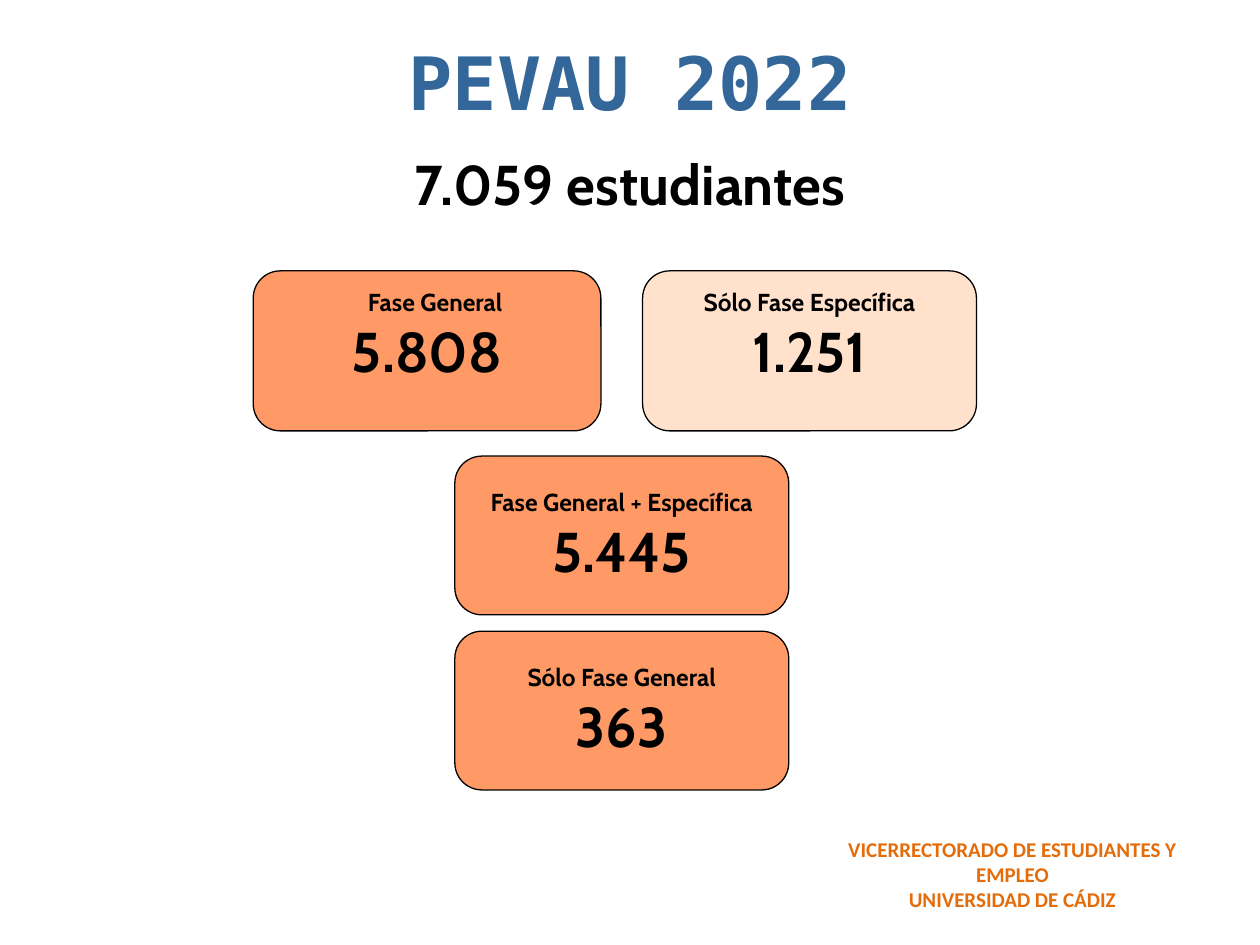
"""Build the PEVAU 2022 student count slide."""
from pptx import Presentation
from pptx.dml.color import RGBColor
from pptx.enum.shapes import MSO_SHAPE
from pptx.enum.text import MSO_ANCHOR, PP_ALIGN
from pptx.util import Inches, Pt

ROUND = MSO_SHAPE.ROUNDED_RECTANGLE
TOP, MIDDLE = MSO_ANCHOR.TOP, MSO_ANCHOR.MIDDLE
CENTER = PP_ALIGN.CENTER

LABEL = {"name": "Cabin", "size": 14, "color": "000000"}
COUNT = {**LABEL, "size": 32}
TITLE = {"name": "DejaVu Sans Mono", "size": 42, "color": "336699"}
FOOTER = {"name": "Calibri", "size": 12, "color": "E46C0A"}

ORANGE, PEACH = "FF9966", "FFE1CC"
LIFT = 0.24
CARDS = [
    ("Fase General + Específica", "5.445", (3.61, 3.62, 2.65, 1.26), ORANGE, 0, 0),
    ("Sólo Fase General", "363", (3.61, 5.01, 2.65, 1.26), ORANGE, 0, 0),
    ("Fase General", "5.808", (2.01, 2.15, 2.76, 1.27), ORANGE, LIFT, 0.13),
    ("Sólo Fase Específica", "1.251", (5.1, 2.15, 2.65, 1.27), PEACH, LIFT, 0),
]
TEXTS = [
    (["PEVAU 2022"], (0, 0.34, 10, 0.65), TITLE, (0.07, 0.03), 0.9),
    (["7.059 estudiantes"], (0, 1.15, 10, 0.61), COUNT, (0.07, 0.04), 1),
    (["VICERRECTORADO DE ESTUDIANTES Y EMPLEO", "UNIVERSIDAD DE CÁDIZ"],
     (6.34, 6.58, 3.39, 0.53), FOOTER, (0.12, 0.06), 1),
]


def paint(target, color):
    target.solid()
    target.fore_color.rgb = RGBColor.from_string(color)


def write(shape, lines, margins, anchor, spacing=1):
    frame = shape.text_frame
    frame.word_wrap = True
    frame.vertical_anchor = anchor
    for side, gap in zip(("left", "top", "right", "bottom"), margins):
        setattr(frame, f"margin_{side}", Inches(gap))
    for i, (text, style) in enumerate(lines):
        para = frame.add_paragraph() if i else frame.paragraphs[0]
        para.alignment = CENTER
        para.line_spacing = spacing
        run = para.add_run()
        run.text = text
        looks = {"name": style["name"], "size": Pt(style["size"]), "bold": True}
        for key, value in looks.items():
            setattr(run.font, key, value)
        paint(run.font.fill, style["color"])


def add_card(slide, label, count, box, fill, lift, indent):
    card = slide.shapes.add_shape(ROUND, *map(Inches, box))
    card.shadow.inherit = False
    card.adjustments[0] = 0.17
    paint(card.fill, fill)
    paint(card.line.fill, "000000")
    card.line.width = Pt(0.75)
    write(card, [(label, LABEL), (count, COUNT)], (0, 0, 0, lift), MIDDLE)
    if indent:
        first = card.text_frame.paragraphs[0]
        first._p.get_or_add_pPr().set("marL", str(Inches(indent)))


def main():
    deck = Presentation()
    deck.slide_width, deck.slide_height = Inches(10), Inches(7.5)
    slide = deck.slides.add_slide(deck.slide_layouts[6])
    for card in CARDS:
        add_card(slide, *card)
    for lines, box, style, pad, spacing in TEXTS:
        area = slide.shapes.add_textbox(*map(Inches, box))
        write(area, [(line, style) for line in lines], pad * 2, TOP, spacing)
    deck.save("out.pptx")


if __name__ == "__main__":
    main()
